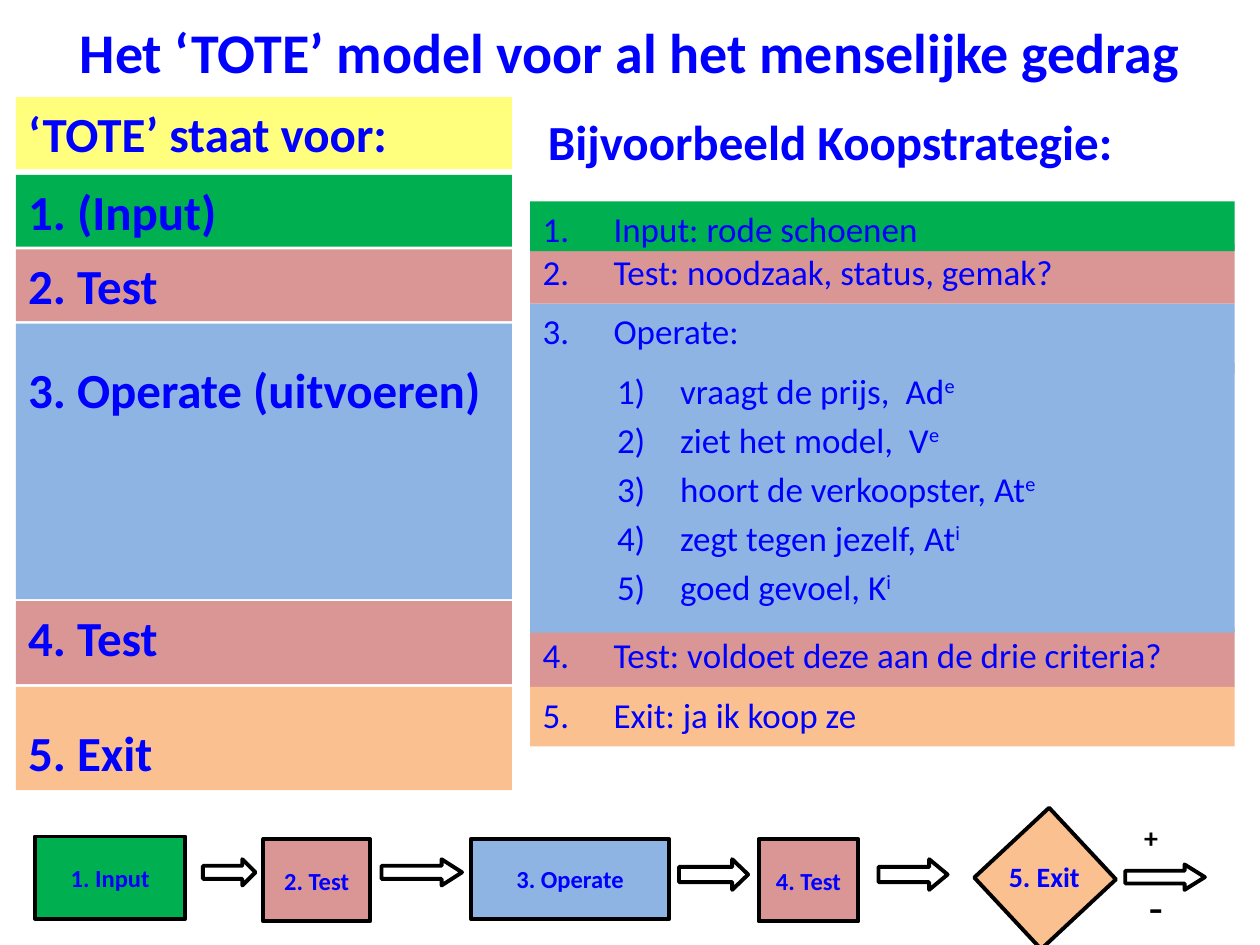
from typing import NamedTuple

from lxml.etree import SubElement as Sub
from pptx import Presentation
from pptx.dml.color import RGBColor as RGB
from pptx.enum.shapes import MSO_SHAPE as Kind
from pptx.enum.text import MSO_ANCHOR as Anchor, PP_ALIGN as Align
from pptx.oxml.ns import qn
from pptx.util import Pt


class Theme:
    font, serif = "Calibri", "Times New Roman"
    blue, black, white = "0000FF", "000000", "FFFFFF"
    yellow, green, red = "FFFF7D", "00B050", "D99694"
    sky, peach = "8EB4E3", "FAC090"
    title, head, body, mark, step, dash = 32, 28, 20, 16, 14, 24
    line = 2.25


class Box(NamedTuple):
    x: float
    y: float
    w: float
    h: float

    def sub(self, x, y, w, h):
        """Box placed relative to this one."""
        return Box(self.x + x, self.y + y, w, h)

    def pts(self):
        return [Pt(n) for n in self]


def color(hue):
    return RGB.from_string(hue)


def shape(slide, box, fill, line=None, kind=Kind.RECTANGLE):
    item = slide.shapes.add_shape(kind, *box.pts())
    item.shadow.inherit = False
    item.fill.solid()
    item.fill.fore_color.rgb = color(fill)
    if line:
        item.line.color.rgb = color(line)
        item.line.width = Pt(Theme.line)
    else:
        item.line.fill.background()
    return item


def label(slide, box):
    return slide.shapes.add_textbox(*box.pts())


def style(para, size, bold=True, hue=Theme.blue, font=Theme.font):
    face = para.font
    face.name, face.size, face.bold = font, Pt(size), bold
    face.color.rgb = color(hue)


def write(item, text, size, hue=Theme.blue, font=Theme.font,
          anchor=Anchor.MIDDLE, after=0, inset=None):
    """Put one centred bold line in a shape."""
    frame = item.text_frame
    frame.word_wrap = True
    frame.vertical_anchor = anchor
    if inset is not None:
        frame.margin_left = frame.margin_right = Pt(inset)
        frame.margin_top = frame.margin_bottom = Pt(inset)
    para = frame.paragraphs[0]
    para.text = text
    para.alignment = Align.CENTER
    para.space_after = Pt(after)
    style(para, size, hue=hue, font=font)


def indent(para, left, hang, num=None, start=1):
    """Set a hanging indent, 20% space before and an optional number."""
    para.alignment = Align.LEFT
    props = para._p.get_or_add_pPr()
    props.set("marL", str(Pt(left)))
    props.set("indent", str(-Pt(hang)))
    gap = Sub(props, qn("a:spcBef"))
    Sub(gap, qn("a:spcPct"), val="20000")
    if num:
        Sub(props, qn("a:buAutoNum"), type=num, startAt=str(start))


def top(item):
    frame = item.text_frame
    frame.word_wrap = True
    frame.vertical_anchor = Anchor.TOP
    return frame


def head(item, text, space=None):
    para = top(item).paragraphs[0]
    para.text = text
    indent(para, 27, 27)
    para.line_spacing = space
    style(para, Theme.head)


def stages(slide, box):
    rows = [
        ("‘TOTE’ staat voor:", 0, 41, Theme.yellow, None),
        ("1. (Input)", 44.5, 41, Theme.green, None),
        ("2. Test", 87, 41, Theme.red, None),
        ("3. Operate (uitvoeren)", 129.5, 157.5, Theme.sky, 1.5),
        ("4. Test", 288, 47.5, Theme.red, None),
        ("5. Exit", 337, 59, Theme.peach, 1.5),
    ]
    for text, y, h, fill, space in rows:
        head(shape(slide, box.sub(0, y, box.w, h), fill), text, space)


def example(slide, box):
    head(label(slide, box.sub(3, 0, box.w, 40)), "Bijvoorbeeld Koopstrategie:")
    rows = [
        (3, "Operate:", 113.5, 40, Theme.sky),
        (2, "Test: noodzaak, status, gemak?", 79.5, 34, Theme.red),
        (4, "Test: voldoet deze aan de drie criteria?", 298.5, 34, Theme.red),
        (5, "Exit: ja ik koop ze", 332.5, 34, Theme.peach),
        (1, "Input: rode schoenen", 55, 28.5, Theme.green),
    ]
    for num, text, y, h, fill in rows:
        item = shape(slide, box.sub(0, y, box.w, h), fill)
        para = top(item).paragraphs[0]
        para.text = text
        indent(para, 40.5, 40.5, "arabicPeriod", num)
        style(para, Theme.body, False)
    senses(slide, box.sub(0, 147.5, box.w, 154))


def senses(slide, box):
    """List the operate steps, each with a raised letter."""
    frame = top(shape(slide, box, Theme.sky))
    lines = [
        ("vraagt de prijs,  Ad", "e"),
        ("ziet het model,  V", "e"),
        ("hoort de verkoopster, At", "e"),
        ("zegt tegen jezelf, At", "i"),
        ("goed gevoel, K", "i"),
    ]
    for i, (text, sup) in enumerate(lines):
        para = frame.add_paragraph() if i else frame.paragraphs[0]
        para.add_run().text = text
        run = para.add_run()
        run.text = sup
        run._r.get_or_add_rPr().set("baseline", "30000")
        indent(para, 78.5, 36, "arabicParenR")
        style(para, Theme.body, False)


def flow(slide, box):
    steps = [
        ("1. Input", 0, 13, 86, 47, Theme.green),
        ("2. Test", 130.5, 14.5, 61, 47, Theme.red),
        ("3. Operate", 249, 14.5, 113.5, 45.5, Theme.sky),
        ("4. Test", 413.5, 14.5, 57, 47, Theme.red),
    ]
    for text, x, y, w, h, fill in steps:
        item = shape(slide, box.sub(x, y, w, h), fill, Theme.black)
        write(item, text, Theme.step, after=10)

    arrows = [
        (96, 26, 30, 15, 0.5), (198, 26, 46, 15, 0.78),
        (368, 26, 39.5, 17.5, 0.52), (482, 26, 39.5, 17.5, 0.6),
        (623, 29, 45.5, 14.5, 0.8),
    ]
    for *spot, tip in arrows:
        item = shape(slide, box.sub(*spot), Theme.white, Theme.black,
                     Kind.RIGHT_ARROW)
        item.adjustments[1] = tip

    gate = shape(slide, box.sub(548, 9, 58.5, 56), Theme.peach, Theme.black)
    gate.rotation = 317
    write(label(slide, box.sub(541.5, 22.5, 70.5, 26.5)), "5. Exit",
          Theme.mark, anchor=Anchor.TOP)

    plus = shape(slide, box.sub(629.5, 4, 16.5, 19.5), Theme.white)
    write(plus, "+", Theme.mark, Theme.black, anchor=Anchor.TOP,
          after=10, inset=0)


def build():
    deck = Presentation()
    deck.slide_width, deck.slide_height = Pt(720), Pt(540)
    slide = deck.slides.add_slide(deck.slide_layouts[6])
    minus = shape(slide, Box(643.5, 502.5, 34, 28), Theme.white)
    write(minus, "-", Theme.dash, Theme.black, Theme.serif, Anchor.TOP,
          inset=0)
    write(label(slide, Box(0, 3.5, 720, 51)),
          "Het ‘TOTE’ model voor al het menselijke gedrag", Theme.title)
    stages(slide, Box(9, 55.5, 283.5, 396))
    example(slide, Box(303, 60, 402.5, 366.5))
    flow(slide, Box(20, 465, 670, 75))
    deck.save("out.pptx")


if __name__ == "__main__":
    build()
